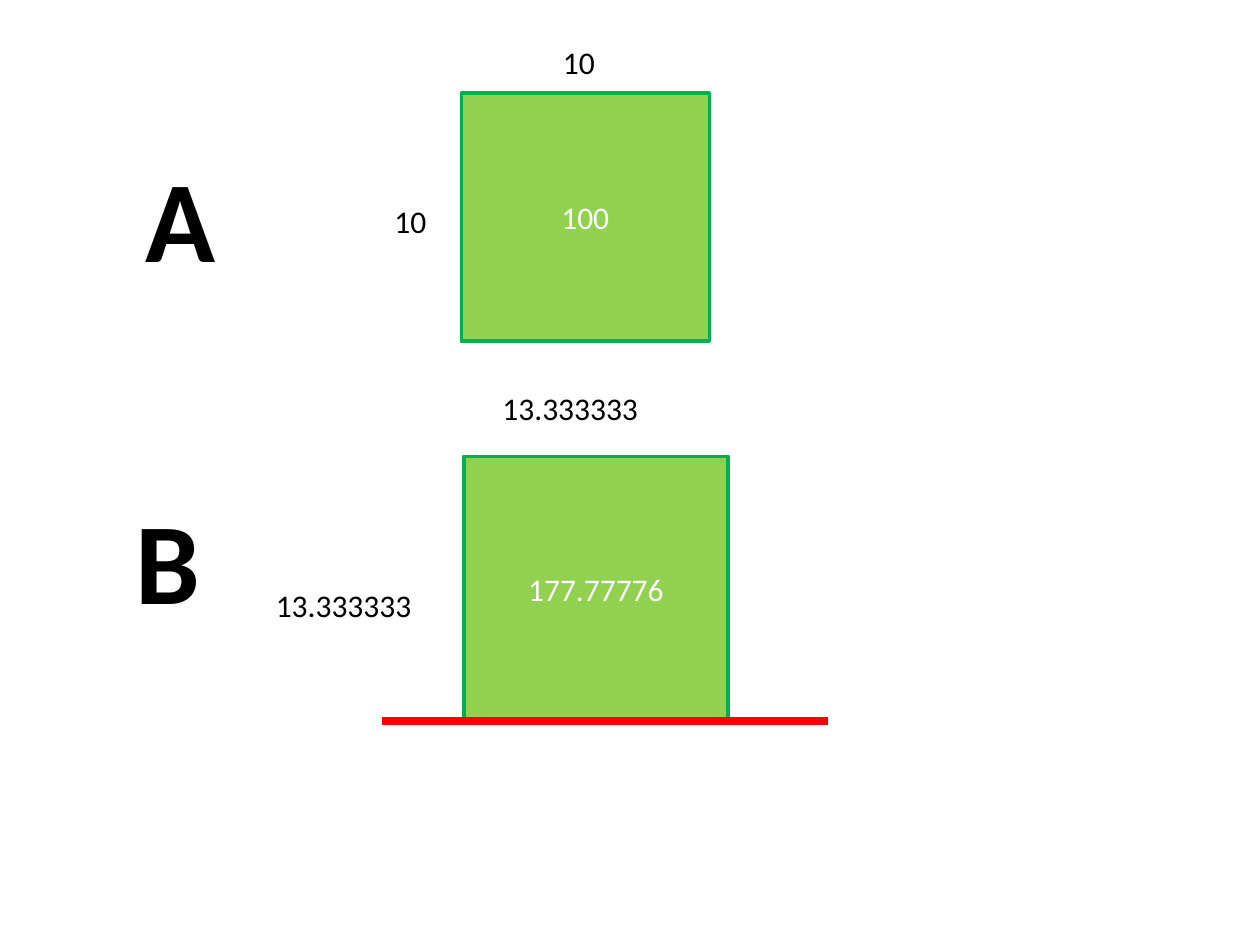
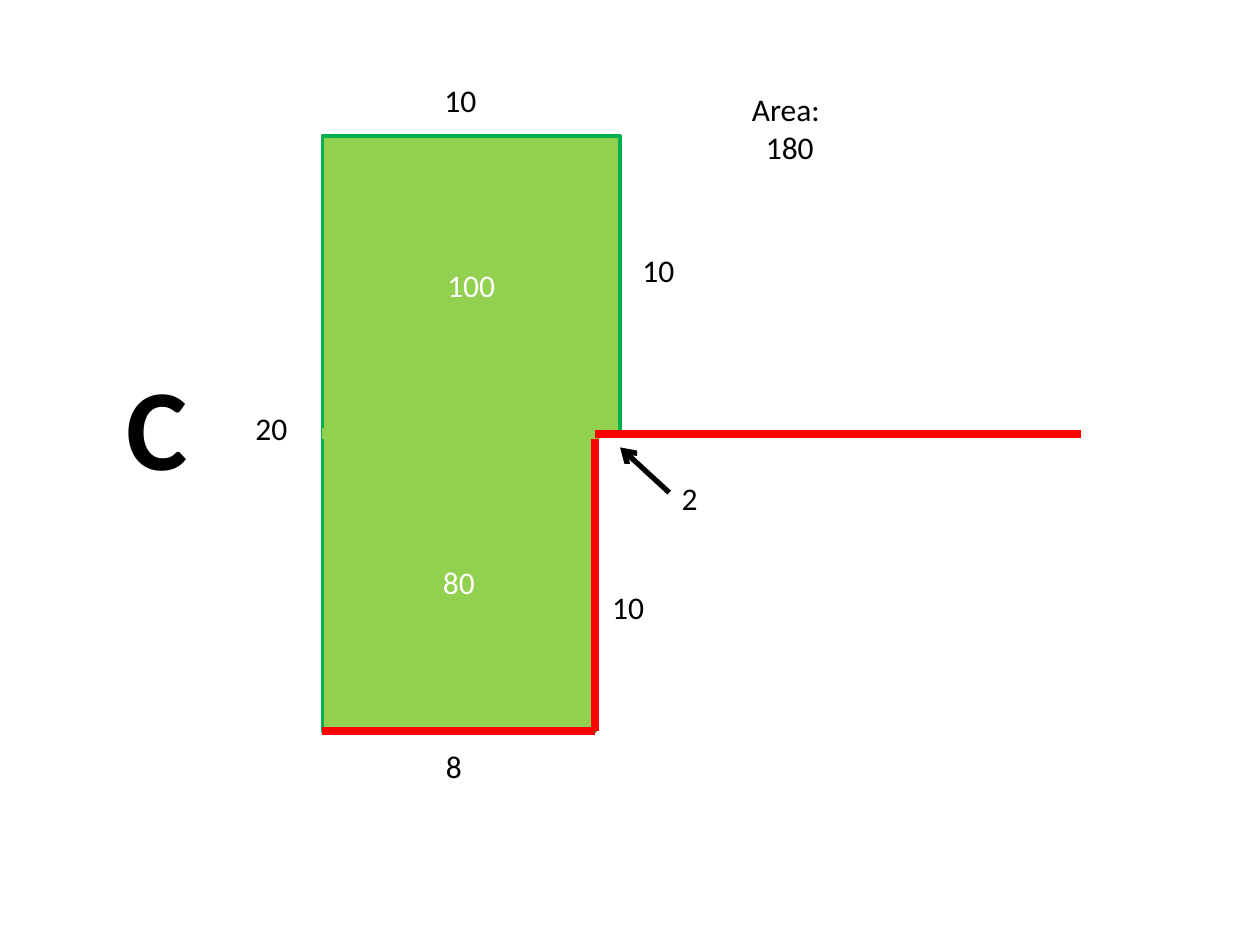
"""Build two slides that compare the areas of figures A, B and C."""
from dataclasses import dataclass

from pptx import Presentation
from pptx import util as u
from pptx.dml.color import RGBColor
from pptx.enum import shapes, text
from pptx.oxml.ns import qn
from lxml import etree

COLORS = {"fill": "92D050", "edge": "00B050", "wall": "FF0000",
          "ink": "000000", "light": "FFFFFF"}
FONT = "Calibri"
SIZE = 18
LETTER_SIZE = 66
INDENT = 0.28


@dataclass
class Area:
    left: float
    top: float
    width: float
    height: float
    caption: str


@dataclass
class Label:
    left: float
    top: float
    lines: tuple[str, ...]
    width: float = 1.6
    height: float = 1.02
    size: int = SIZE
    bold: bool = False


@dataclass
class Line:
    start: tuple[float, float]
    end: tuple[float, float]
    color: str = "wall"
    weight: float = 4.5
    arrow: bool = False


def rgb(name: str) -> RGBColor:
    return RGBColor.from_string(COLORS[name])


def letter(left: float, top: float, caption: str) -> Label:
    return Label(left, top, (caption,), 2.2, 3.07, LETTER_SIZE, True)


def add_run(paragraph, caption: str, color: str, size: int = SIZE, bold: bool = False) -> None:
    run = paragraph.add_run()
    run.text = caption
    run.font.name = FONT
    run.font.size = u.Pt(size)
    run.font.bold = bold
    run.font.color.rgb = rgb(color)


def draw_area(slide, area: Area) -> None:
    shape = slide.shapes.add_shape(
        shapes.MSO_SHAPE.RECTANGLE, u.Cm(area.left), u.Cm(area.top),
        u.Cm(area.width), u.Cm(area.height))
    shape.shadow.inherit = False
    shape.fill.solid()
    shape.fill.fore_color.rgb = rgb("fill")
    shape.line.color.rgb = rgb("edge")
    shape.line.width = u.Pt(2)
    shape.text_frame.vertical_anchor = text.MSO_ANCHOR.MIDDLE
    paragraph = shape.text_frame.paragraphs[0]
    paragraph.alignment = text.PP_ALIGN.CENTER
    add_run(paragraph, area.caption, "light")


def draw_label(slide, label: Label) -> None:
    box = slide.shapes.add_textbox(
        u.Cm(label.left), u.Cm(label.top), u.Cm(label.width), u.Cm(label.height))
    frame = box.text_frame
    frame.word_wrap = True
    frame.auto_size = text.MSO_AUTO_SIZE.SHAPE_TO_FIT_TEXT
    for index, caption in enumerate(label.lines):
        paragraph = frame.add_paragraph() if index else frame.paragraphs[0]
        if index:
            paragraph._p.get_or_add_pPr().set("marL", str(u.Cm(INDENT)))
        add_run(paragraph, caption, "ink", label.size, label.bold)


def draw_line(slide, line: Line) -> None:
    points = [u.Cm(value) for value in (*line.start, *line.end)]
    connector = slide.shapes.add_connector(shapes.MSO_CONNECTOR.STRAIGHT, *points)
    connector.line.color.rgb = rgb(line.color)
    connector.line.width = u.Pt(line.weight)
    if line.arrow:
        etree.SubElement(connector.line._get_or_add_ln(), qn("a:tailEnd"), type="arrow")
    etree.SubElement(connector._element.spPr, qn("a:effectLst"))


DRAW = {Area: draw_area, Label: draw_label, Line: draw_line}


def squares() -> list:
    """List the parts of figures A and B."""
    side_b, left_b, ground = 5.33, 9.35, 14.53
    return [
        letter(2.69, 2.84, "A"),
        Area(9.3, 1.88, 5, 5, "100"),
        Label(7.7, 3.94, ("10",)),
        Label(11.1, 0.74, ("10",)),
        letter(2.49, 9.73, "B"),
        Area(left_b, ground - side_b, side_b, side_b, "177.77776"),
        Label(5.31, 11.68, ("13.333333",), 4.04),
        Label(9.88, 7.72, ("13.333333",), 4.04),
        Line((7.7, ground), (16.69, ground)),
    ]


def stepped_figure() -> list:
    """List the parts of figure C, back to front."""
    left, top, side, lower_width = 6.5, 2.74, 6, 5.5
    middle, bottom, corner = top + side, top + 2 * side, left + lower_width
    return [
        Area(left, middle, lower_width, side, "80"),
        Line((left, bottom), (corner, bottom)),
        Area(left, top, side, side, "100"),
        Line((corner, bottom), (corner, middle)),
        Line((left, middle), (12.09, middle), "fill", 6),
        Line((corner, middle), (21.79, middle)),
        Label(4.9, 8.13, ("20",), 2.59, 1.8),
        Label(8.71, 1.5, ("10",)),
        Label(12.7, 4.93, ("10",)),
        Label(8.74, 14.94, ("8",), 1.35),
        Label(12.09, 11.73, ("10",), 1.4),
        Label(13.49, 9.53, ("2",), 1),
        Line((13.49, 9.93), (12.5, 9.02), "ink", 3, arrow=True),
        letter(2.31, 7.04, "C"),
        Label(14.91, 1.7, ("Area:", "180"), 9.6, 1.8),
    ]


def main() -> None:
    presentation = Presentation()
    presentation.slide_width = u.Cm(25.4)
    presentation.slide_height = u.Cm(19.05)
    blank = presentation.slide_layouts.get_by_name("Blank")
    for parts in (squares(), stepped_figure()):
        slide = presentation.slides.add_slide(blank)
        for part in parts:
            DRAW[type(part)](slide, part)
    presentation.save("out.pptx")


if __name__ == "__main__":
    main()
